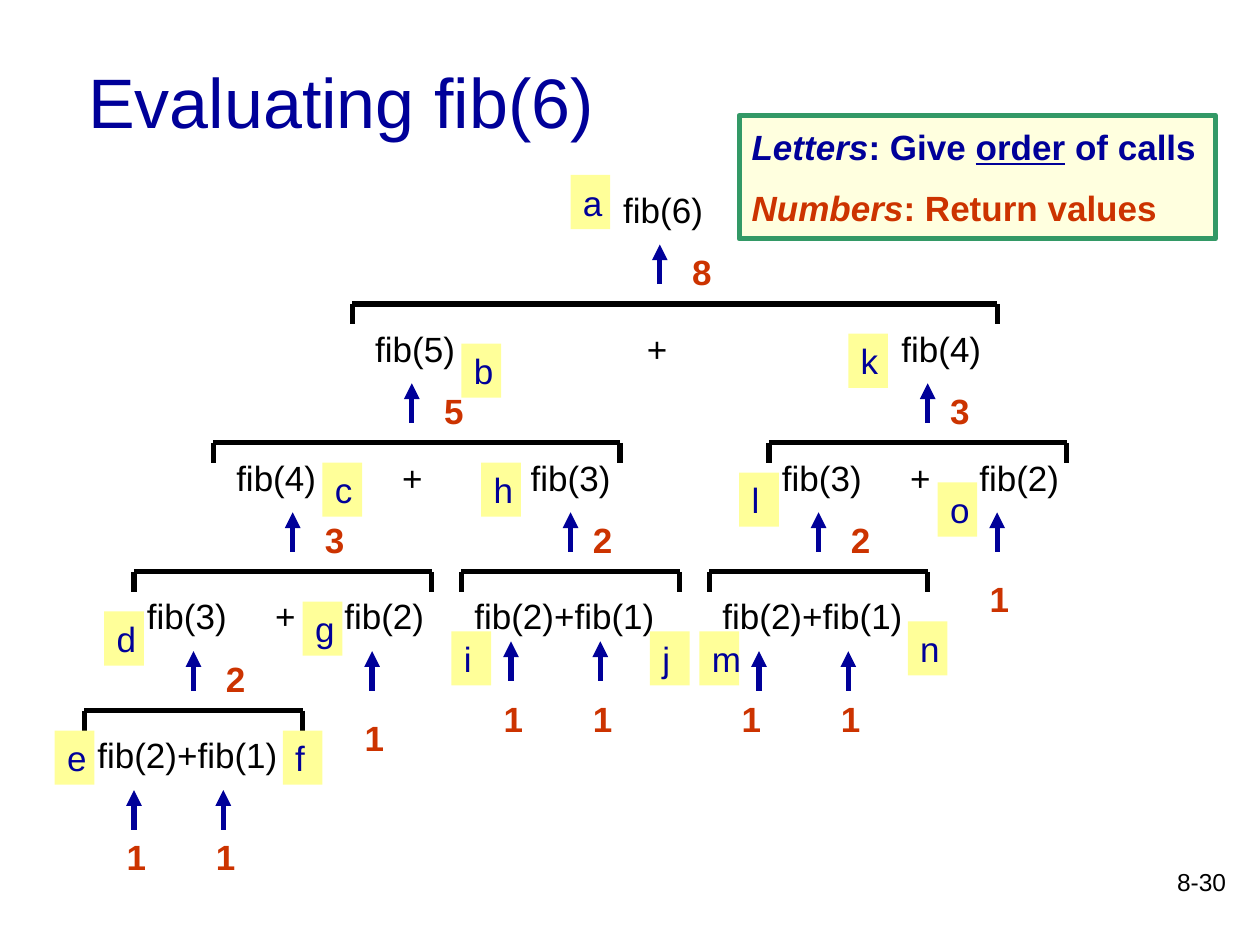
"""Build a slide that traces the recursive calls of fib(6) as a tree."""
from dataclasses import dataclass

from lxml import etree
from pptx import Presentation
from pptx.dml.color import RGBColor
from pptx.enum.shapes import MSO_CONNECTOR, MSO_SHAPE
from pptx.enum.text import MSO_ANCHOR, PP_ALIGN
from pptx.oxml.ns import qn
from pptx.util import Inches, Pt

LINE, RECT = MSO_CONNECTOR.STRAIGHT, MSO_SHAPE.RECTANGLE
TOP, MIDDLE = MSO_ANCHOR.TOP, MSO_ANCHOR.MIDDLE
LEFT, CENTER, RIGHT = PP_ALIGN.LEFT, PP_ALIGN.CENTER, PP_ALIGN.RIGHT


@dataclass(frozen=True)
class Theme:
    font: str = "Arial"
    spacer_font: str = "Times New Roman"
    black: RGBColor = RGBColor(0, 0, 0)
    navy: RGBColor = RGBColor(0x00, 0x00, 0x99)
    red: RGBColor = RGBColor(0xCC, 0x33, 0x00)
    green: RGBColor = RGBColor(0x33, 0x99, 0x66)
    yellow: RGBColor = RGBColor(0xFF, 0xFF, 0x99)
    cream: RGBColor = RGBColor(0xFF, 0xFF, 0xDF)
    title: int = 40
    body: int = 20
    spacer: int = 24
    number: int = 14
    stroke: int = 3


T = Theme()
TITLE = "Evaluating fib(6)"
PAGE = "8-30"
LEGEND = [
    (T.navy, [("Letters", "i"), (": Give ", ""), ("order", "u"), (" of calls", "")]),
    (T.red, [("Numbers", "i"), (": Return values", "")]),
]

# (column, row, columns wide, terms, tab stops in inches)
CALLS = [
    (60, 17, 13, ["fib(6)"], []),
    (35, 31, 77, ["fib(5)", "+", "fib(4)"], [2.24, 4.26]),
    (21, 44, 54, ["fib(4)", "+", "fib(3)"], [1.4, 2.42]),
    (76, 44, 34, ["fib(3)", "+", "fib(2)"], [1.1, 1.65]),
    (12, 58, 34, ["fib(3)", "+", "fib(2)"], [1.1, 1.65]),
    (45, 58, 26, ["fib(2)+fib(1)"], []),
    (70, 58, 26, ["fib(2)+fib(1)"], []),
    (7, 72, 26, ["fib(2)+fib(1)"], []),
]
# (first column, last column, row)
BRACKETS = [(35, 100, 30), (21, 62, 44), (77, 107, 44), (13, 43, 57),
            (46, 68, 57), (71, 93, 57), (8, 30, 71)]
# (value, arrow column, arrow row, columns right, rows down)
RETURNS = [
    ("8", 66, 24, 2, 0), ("5", 41, 38, 2, 0), ("3", 93, 38, 1, 0),
    ("3", 29, 51, 2, 0), ("2", 57, 51, 1, 0), ("2", 82, 51, 2, 0),
    ("1", 100, 51, -2, 6), ("2", 19, 65, 2, 0), ("1", 37, 65, -2, 6),
    ("1", 51, 64, -2, 5), ("1", 60, 64, -2, 5), ("1", 76, 65, -3, 4),
    ("1", 85, 65, -2, 4), ("1", 13, 79, -2, 4), ("1", 22, 79, -2, 4),
]
# (letter, column, row)
LETTERS = [
    ("a", 57, 17), ("b", 46, 34), ("c", 32, 46), ("d", 10, 61), ("e", 5, 73),
    ("f", 28, 73), ("g", 30, 60), ("h", 48, 46), ("i", 45, 63), ("j", 65, 63),
    ("k", 85, 33), ("l", 74, 47), ("m", 70, 63), ("n", 91, 62), ("o", 94, 48),
]

WIDTH, HEIGHT = 10, 7.5
CELL = WIDTH / 127
ORIGIN_X, ORIGIN_Y = 0.04, 0.05
BOX_H = 0.43


def x(col):
    return Inches(ORIGIN_X + col * CELL)


def y(row):
    return Inches(ORIGIN_Y + row * CELL)


def set_font(font, color, size=T.body, bold=False, name=T.font):
    font.name, font.size, font.bold = name, Pt(size), bold
    font.color.rgb = color


def add_text(s, text, left, top, width, height, color, size=T.body, bold=False, align=LEFT):
    sp = s.shapes.add_textbox(left, top, width, height)
    sp.text_frame.word_wrap = True
    p = sp.text_frame.paragraphs[0]
    p.text, p.alignment = text, align
    set_font(p.font, color, size, bold)


def add_box(s, left, top, width, height, fill, anchor=TOP):
    sp = s.shapes.add_shape(RECT, left, top, width, height)
    sp.shadow.inherit = False
    sp.fill.solid()
    sp.fill.fore_color.rgb = fill
    sp.line.fill.background()
    sp.text_frame.word_wrap = True
    sp.text_frame.vertical_anchor = anchor
    return sp


def add_line(s, start, end, color, arrow=False):
    cx = s.shapes.add_connector(LINE, x(start[0]), y(start[1]), x(end[0]), y(end[1]))
    cx.line.color.rgb, cx.line.width = color, Pt(T.stroke)
    if arrow:
        etree.SubElement(cx.line._get_or_add_ln(), qn("a:tailEnd"), type="triangle")
    etree.SubElement(cx._element.spPr, qn("a:effectLst"))


def add_call(s, col, row, cols, terms, stops):
    sp = s.shapes.add_textbox(x(col), y(row), Inches(cols * CELL), Inches(0.5))
    sp.text_frame.word_wrap = True
    p = sp.text_frame.paragraphs[0]
    tabs = etree.SubElement(p._p.get_or_add_pPr(), qn("a:tabLst"))
    for stop in stops:
        etree.SubElement(tabs, qn("a:tab"), pos=str(Inches(stop)), algn="l")
    spacer, r = p.add_run(), p.add_run()
    spacer.text, r.text = " ", "\t".join(terms)
    set_font(spacer.font, T.black, T.spacer, name=T.spacer_font)
    set_font(r.font, T.black)


def add_bracket(s, first, last, row):
    add_line(s, (first, row), (last, row), T.black)
    for col in (first, last):
        add_line(s, (col, row), (col, row + 2), T.black)


def add_return(s, value, col, row, right, down):
    add_line(s, (col, row + 4), (col, row), T.navy, arrow=True)
    add_text(s, value, x(col + right), y(row + down), Inches(5 * CELL), Inches(BOX_H),
             T.red, bold=True)


def add_letter(s, letter, col, row):
    sp = add_box(s, x(col), y(row), Inches(4 * CELL), Inches(BOX_H), T.yellow)
    p = sp.text_frame.paragraphs[0]
    p.text, p.alignment = letter, LEFT
    set_font(p.font, T.navy)


def add_legend(s):
    sp = add_box(s, x(74), y(11), Inches(48 * CELL), Inches(0.98), T.cream, MIDDLE)
    sp.line.color.rgb, sp.line.width = T.green, Pt(T.stroke)
    tf = sp.text_frame
    for i, (color, runs) in enumerate(LEGEND):
        p = tf.add_paragraph() if i else tf.paragraphs[0]
        p.alignment = LEFT
        p.space_before = Pt(11 if i else 0)
        set_font(p.font, color, bold=True)
        for text, style in runs:
            r = p.add_run()
            r.text = text
            r.font.italic, r.font.underline = style == "i", style == "u"


def add_title(s):
    sp = s.shapes.title
    sp.left, sp.top, sp.width, sp.height = map(Inches, (0.5, 0.17, 4.41, 1.25))
    sp.text_frame.vertical_anchor = MIDDLE
    p = sp.text_frame.paragraphs[0]
    p.text, p.alignment = TITLE, CENTER
    set_font(p.font, T.navy, T.title)


def main():
    prs = Presentation()
    prs.slide_width, prs.slide_height = Inches(WIDTH), Inches(HEIGHT)
    s = prs.slides.add_slide(prs.slide_layouts[5])
    add_title(s)
    add_text(s, PAGE, Inches(7.75), Inches(6.83), Inches(2.08), Inches(0.5),
             T.black, T.number, align=RIGHT)
    for add, items in ((add_return, RETURNS), (add_call, CALLS),
                       (add_bracket, BRACKETS), (add_letter, LETTERS)):
        for item in items:
            add(s, *item)
    add_legend(s)
    prs.save("out.pptx")


if __name__ == "__main__":
    main()
